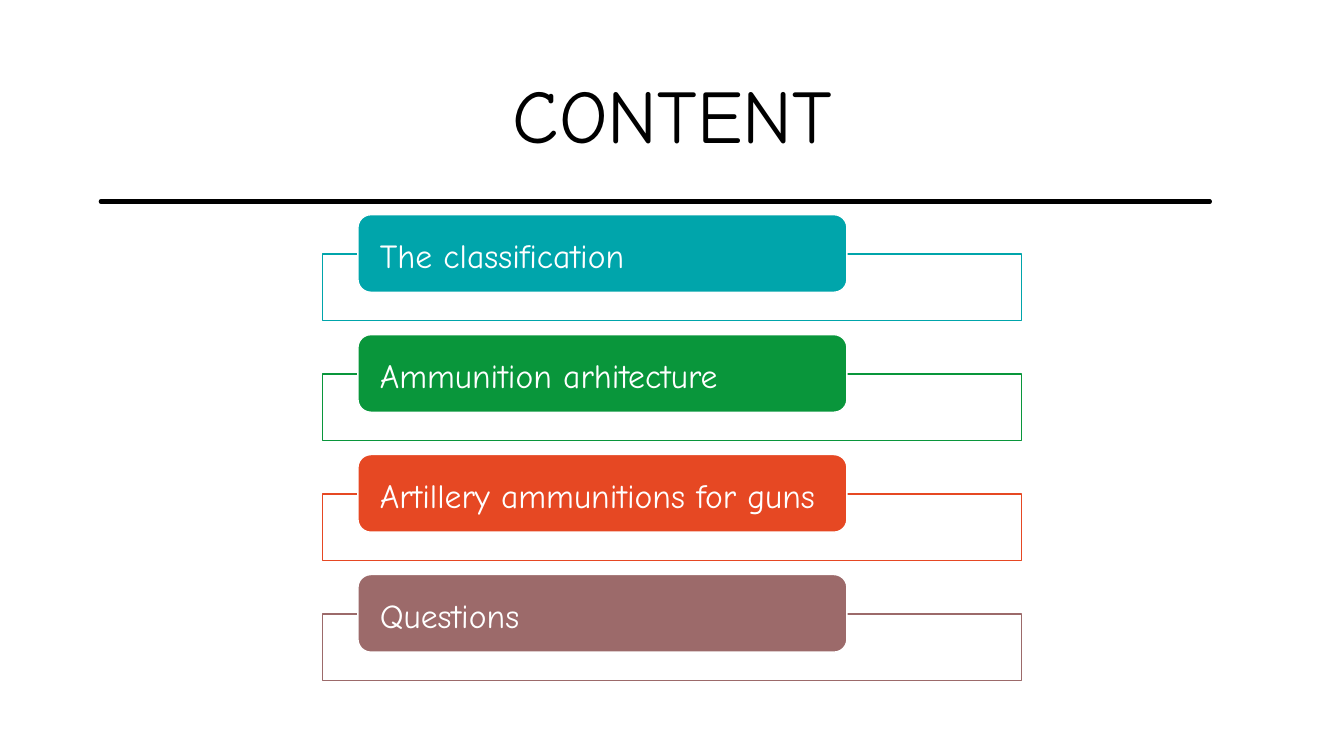
from typing import NamedTuple

from lxml.etree import SubElement
from pptx import Presentation
from pptx.dml.color import RGBColor
from pptx.enum.shapes import MSO_SHAPE
from pptx.enum.text import MSO_ANCHOR, PP_ALIGN
from pptx.oxml.ns import qn
from pptx.util import Inches, Pt

BLACK = RGBColor(0x00, 0x00, 0x00)
WHITE = RGBColor(0xFF, 0xFF, 0xFF)
TEAL = RGBColor(0x00, 0xA5, 0xAB)
GREEN = RGBColor(0x09, 0x96, 0x3B)
ORANGE = RGBColor(0xE6, 0x48, 0x23)
MAUVE = RGBColor(0x9C, 0x6A, 0x6A)
FONT = "Comic Neue"


class Topic(NamedTuple):
    label: str
    color: RGBColor


TOPICS = [
    Topic("The classification", TEAL),
    Topic("Ammunition arhitecture", GREEN),
    Topic("Artillery ammunitions for guns", ORANGE),
    Topic("Questions", MAUVE),
]
FIRST_TOP, TOPIC_STEP = 2.13, 1.19

# Upper and lower edges of the hand-drawn rule, left to right
RULE_TOP = [(0.92, 1.87), (1.2, 1.86), (1.6, 1.87), (1.89, 1.87), (2.4, 1.87),
            (2.96, 1.87), (3.5, 1.86), (4.05, 1.87), (4.8, 1.87), (5.37, 1.87),
            (5.9, 1.88), (6.5, 1.86), (7.0, 1.88), (7.6, 1.85), (8.02, 1.87),
            (8.5, 1.86), (9.0, 1.88), (9.6, 1.86), (9.9, 1.85), (10.2, 1.87),
            (10.8, 1.88), (11.5, 1.86), (12.42, 1.87)]
RULE_BOTTOM = [(0.92, 1.9), (1.5, 1.89), (2.2, 1.91), (2.7, 1.91), (3.2, 1.89),
               (3.8, 1.91), (4.2, 1.9), (4.8, 1.91), (5.4, 1.9), (6.0, 1.9),
               (6.7, 1.9), (7.2, 1.9), (7.7, 1.91), (8.2, 1.9), (8.6, 1.91),
               (9.2, 1.89), (9.8, 1.91), (10.1, 1.92), (10.4, 1.89),
               (11.0, 1.89), (11.8, 1.9), (12.42, 1.9)]


def paint(shape, fill: RGBColor, line: RGBColor, width: float) -> None:
    shape.shadow.inherit = False
    shape.fill.solid()
    shape.fill.fore_color.rgb = fill
    shape.line.color.rgb = line
    shape.line.width = Pt(width)


def write(shape, text: str, size: int, color: RGBColor,
          frame_format: dict, paragraph_format: dict) -> None:
    frame = shape.text_frame
    for name, value in frame_format.items():
        setattr(frame, name, value)
    paragraph = frame.paragraphs[0]
    paragraph.text = text
    for name, value in paragraph_format.items():
        setattr(paragraph, name, value)
    font_format = {"name": FONT, "size": Pt(size)}
    for name, value in font_format.items():
        setattr(paragraph.font, name, value)
    paragraph.font.color.rgb = color


def draw_rule(slide) -> None:
    outline = RULE_TOP + RULE_BOTTOM[::-1]
    builder = slide.shapes.build_freeform(*outline[0], scale=Inches(1))
    builder.add_line_segments(outline[1:], close=True)
    paint(builder.convert_to_shape(), BLACK, BLACK, 3)


def draw_topic(slide, topic: Topic, top: float) -> None:
    frame = slide.shapes.add_shape(MSO_SHAPE.RECTANGLE, Inches(3.2), Inches(top + 0.39),
                                   Inches(6.93), Inches(0.66))
    paint(frame, WHITE, topic.color, 1)
    white = frame.fill._xPr.find(f"{qn('a:solidFill')}/{qn('a:srgbClr')}")
    SubElement(white, qn("a:alpha"), val="90000")

    tab = slide.shapes.add_shape(MSO_SHAPE.ROUNDED_RECTANGLE, Inches(3.55), Inches(top),
                                 Inches(4.85), Inches(0.77))
    paint(tab, topic.color, WHITE, 1)
    write(tab, topic.label, 24, WHITE,
          {"word_wrap": True, "vertical_anchor": MSO_ANCHOR.MIDDLE,
           "margin_left": Inches(0.18), "margin_right": Inches(0.18),
           "margin_top": 0, "margin_bottom": 0},
          {"alignment": PP_ALIGN.LEFT, "line_spacing": 1.1})


def main() -> None:
    prs = Presentation()
    prs.slide_width, prs.slide_height = Inches(13.33), Inches(7.5)
    slide = prs.slides.add_slide(prs.slide_layouts[6])

    # Heading and rule
    draw_rule(slide)
    heading = slide.shapes.add_textbox(Inches(0.92), Inches(0.4), Inches(11.5), Inches(1.45))
    write(heading, "CONTENT", 54, BLACK,
          {"word_wrap": True, "vertical_anchor": MSO_ANCHOR.MIDDLE},
          {"alignment": PP_ALIGN.CENTER})

    # Topic list
    for index, topic in enumerate(TOPICS):
        draw_topic(slide, topic, FIRST_TOP + index * TOPIC_STEP)

    prs.save("out.pptx")


if __name__ == "__main__":
    main()
